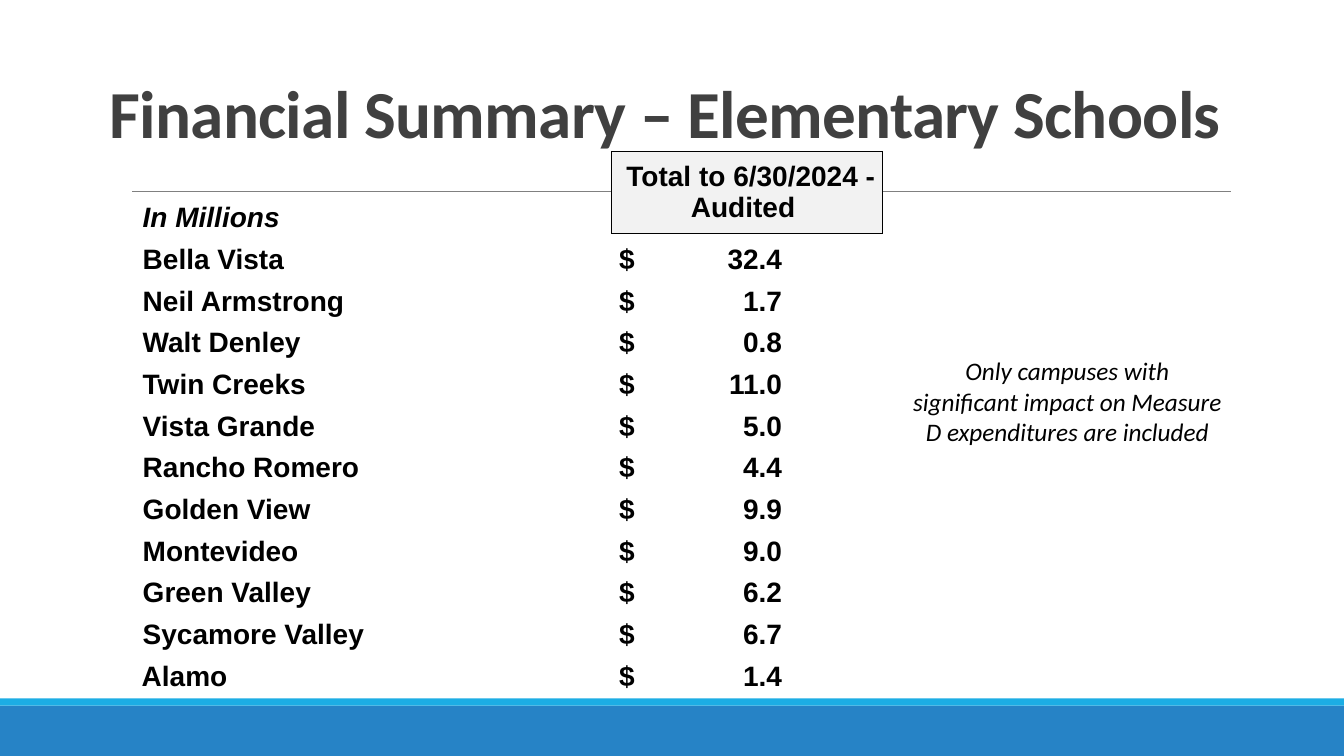
from lxml.etree import SubElement
from pptx import Presentation
from pptx.dml.color import RGBColor
from pptx.enum.shapes import MSO_CONNECTOR, MSO_SHAPE
from pptx.enum.text import MSO_ANCHOR, MSO_AUTO_SIZE, PP_ALIGN
from pptx.oxml.ns import qn
from pptx.util import Cm, Pt

TITLE = "Financial Summary – Elementary Schools "
NOTE = "Only campuses with significant impact on Measure D expenditures are included"
HEADS = (" In Millions", " Total to 6/30/2024 - Audited ")
COSTS = [
    ("Bella Vista", 32.4),
    ("Neil Armstrong", 1.7),
    ("Walt Denley", 0.8),
    ("Twin Creeks", 11.0),
    ("Vista Grande", 5.0),
    ("Rancho Romero", 4.4),
    ("Golden View", 9.9),
    ("Montevideo", 9.0),
    ("Green Valley", 6.2),
    ("Sycamore Valley", 6.7),
    ("Alamo", 1.4),
]
WIDE, HIGH = 33.87, 19.05
BANDS = [(17.78, 1.27, "2683C6"), (17.6, 0.18, "1CADE4")]  # top, height, colour
COLS = (12.01, 6.83)
HEAD, ROW = 2.08, 1.05
TAB = 4.3
NO_STYLE = "{2D5ABB26-0587-4C30-8999-92F81FD0307C}"


def paint(target, color):
    target.solid()
    target.fore_color.rgb = RGBColor.from_string(color)


def style(para, font, size, color="000000", bold=False, italic=False):
    for run in para.runs:
        run.font.name = font
        run.font.size = Pt(size)
        run.font.bold = bold
        run.font.italic = italic
        paint(run.font.fill, color)


def fill_cell(cell, text, anchor=MSO_ANCHOR.BOTTOM, italic=False):
    cell.margin_left = cell.margin_right = cell.margin_top = cell.margin_bottom = 0
    cell.vertical_anchor = anchor
    cell.fill.background()
    para = cell.text_frame.paragraphs[0]
    para.text = text
    style(para, "Arial", 20, bold=True, italic=italic)
    return para


def frame(cell):
    """Draw a thin black border on all four sides of the cell."""
    props = cell._tc.get_or_add_tcPr()
    for spot, side in enumerate(("lnL", "lnR", "lnT", "lnB")):
        line = props.makeelement(qn(f"a:{side}"), {"w": str(Pt(0.5))})
        ink = SubElement(line, qn("a:solidFill"))
        SubElement(ink, qn("a:srgbClr"), val="000000")
        props.insert(spot, line)


def add_bands(slide):
    for top, high, color in BANDS:
        band = slide.shapes.add_shape(
            MSO_SHAPE.RECTANGLE, 0, Cm(top), Cm(WIDE), Cm(high))
        band.shadow.inherit = False
        paint(band.fill, color)
        band.line.fill.background()
    rule = slide.shapes.add_connector(
        MSO_CONNECTOR.STRAIGHT, Cm(3.33), Cm(4.82), Cm(31.01), Cm(4.82))
    paint(rule.line.fill, "808080")
    rule.line.width = Pt(0.5)
    SubElement(rule._element.spPr, qn("a:effectLst"))


def add_title(slide):
    title = slide.shapes.title
    title.left, title.top = Cm(2.34), Cm(0.28)
    title.width, title.height = Cm(29.21), Cm(3.68)
    text = title.text_frame
    text.text = TITLE
    text.auto_size = MSO_AUTO_SIZE.NONE
    text.vertical_anchor = MSO_ANCHOR.BOTTOM
    para = text.paragraphs[0]
    para.alignment = PP_ALIGN.CENTER
    para.line_spacing = 0.85
    style(para, "Calibri", 48, "404040", bold=True)
    para.runs[0].font._element.set("spc", "-50")


def add_note(slide):
    box = slide.shapes.add_textbox(Cm(22.71), Cm(8.84), Cm(8.38), Cm(2.57))
    text = box.text_frame
    text.word_wrap = True
    text.text = NOTE
    para = text.paragraphs[0]
    para.alignment = PP_ALIGN.CENTER
    style(para, "Calibri", 18, italic=True)


def add_costs(slide):
    count = len(COSTS) + 1
    table = slide.shapes.add_table(
        count, 2, Cm(3.4), Cm(3.81), Cm(sum(COLS)), Cm(HEAD + ROW * len(COSTS))).table
    table.first_row = table.horz_banding = False
    table._tbl.tblPr.find(qn("a:tableStyleId")).text = NO_STYLE
    for col, wide in zip(table.columns, COLS):
        col.width = Cm(wide)
    for spot, row in enumerate(table.rows):
        row.height = Cm(ROW if spot else HEAD)

    fill_cell(table.cell(0, 0), HEADS[0], italic=True)
    total = table.cell(0, 1)
    fill_cell(total, HEADS[1], MSO_ANCHOR.MIDDLE).alignment = PP_ALIGN.CENTER
    paint(total.fill, "F2F2F2")
    frame(total)

    for spot, (school, cost) in enumerate(COSTS, 1):
        fill_cell(table.cell(spot, 0), f" {school}")
        para = fill_cell(table.cell(spot, 1), f" $\t{cost:.1f}")
        tabs = SubElement(para._p.get_or_add_pPr(), qn("a:tabLst"))
        SubElement(tabs, qn("a:tab"), pos=str(Cm(TAB)), algn="r")


def main():
    deck = Presentation()
    deck.slide_width, deck.slide_height = Cm(WIDE), Cm(HIGH)
    slide = deck.slides.add_slide(deck.slide_layouts[5])
    add_bands(slide)
    add_title(slide)
    add_note(slide)
    add_costs(slide)
    deck.save("out.pptx")


if __name__ == "__main__":
    main()
